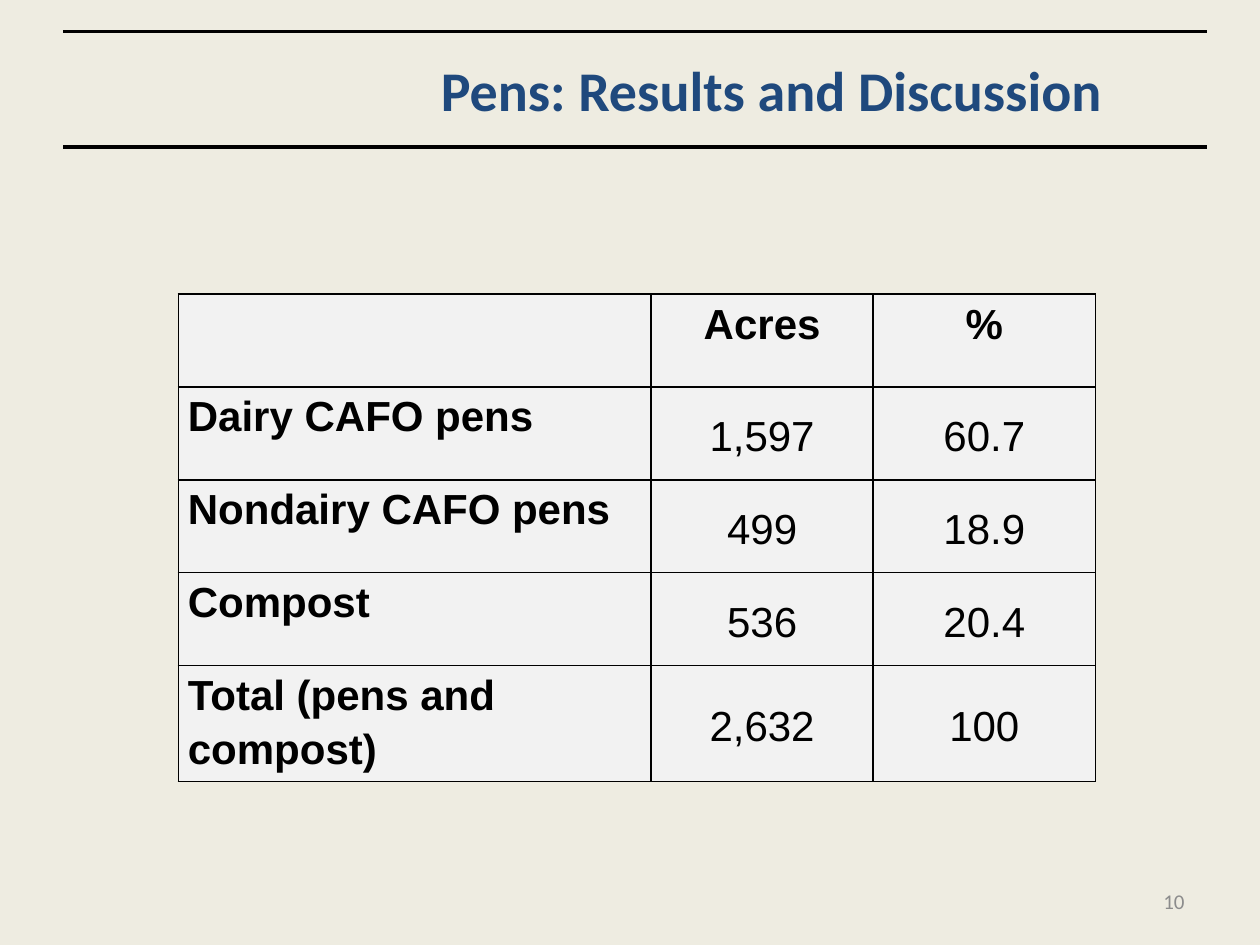
from dataclasses import dataclass

import lxml.etree
import pptx
import pptx.dml.color
import pptx.enum.shapes
import pptx.enum.text
import pptx.oxml.ns
import pptx.slide
import pptx.table
import pptx.text.text
import pptx.util

Pt = pptx.util.Pt
RGBColor = pptx.dml.color.RGBColor
Align = pptx.enum.text.PP_ALIGN
Anchor = pptx.enum.text.MSO_ANCHOR
qn = pptx.oxml.ns.qn

BACKGROUND = RGBColor(0xEE, 0xEC, 0xE1)
BLACK = RGBColor(0x00, 0x00, 0x00)
NAVY = RGBColor(0x1F, 0x49, 0x7D)
GRAY = RGBColor(0x8C, 0x8C, 0x8C)
CELL_FILL = RGBColor(0xF2, 0xF2, 0xF2)

RULE_LEFT, RULE_RIGHT = 36, 690
RULE_TOPS = (18, 84)
TABLE_LEFT, TABLE_TOP = 102, 168
COL_WIDTHS = (270, 127, 127)
ROW_HEIGHT = 53.1
ROWS = (
    ("", "Acres", "%"),
    ("Dairy CAFO pens", "1,597", "60.7"),
    ("Nondairy CAFO pens", "499", "18.9"),
    ("Compost", "536", "20.4"),
    ("Total (pens and compost)", "2,632", "100"),
)


@dataclass(frozen=True)
class Style:
    size: float
    font: str
    color: RGBColor
    bold: bool
    align: Align
    anchor: Anchor


@dataclass(frozen=True)
class Label:
    text: str
    left: float
    top: float
    width: float
    height: float
    style: Style


TITLE = Style(32, "Calibri", NAVY, True, Align.CENTER, Anchor.MIDDLE)
PAGE = Style(12, "Calibri", GRAY, False, Align.RIGHT, Anchor.MIDDLE)
HEADER = Style(24, "Arial", BLACK, True, Align.CENTER, Anchor.TOP)
ROW_NAME = Style(24, "Arial", BLACK, True, Align.LEFT, Anchor.TOP)
VALUE = Style(24, "Arial", BLACK, False, Align.CENTER, Anchor.MIDDLE)

LABELS = (
    Label("Pens: Results and Discussion", 192, 18, 498, 66, TITLE),
    Label("10", 516, 500.5, 168, 28.75, PAGE),
)


def write(tf: pptx.text.text.TextFrame, text: str, style: Style) -> None:
    tf.text = text
    p = tf.paragraphs[0]
    p.alignment = style.align
    for r in p.runs:
        r.font.size = Pt(style.size)
        r.font.name = style.font
        r.font.bold = style.bold
        r.font.color.rgb = style.color


def add_rule(s: pptx.slide.Slide, top: float) -> None:
    line = s.shapes.add_connector(
        pptx.enum.shapes.MSO_CONNECTOR.STRAIGHT,
        Pt(RULE_LEFT), Pt(top), Pt(RULE_RIGHT), Pt(top),
    )
    line.line.color.rgb = BLACK
    line.line.width = Pt(2)
    lxml.etree.SubElement(line._element.spPr, qn("a:effectLst"))


def add_label(s: pptx.slide.Slide, label: Label) -> None:
    sp = s.shapes.add_textbox(
        Pt(label.left), Pt(label.top), Pt(label.width), Pt(label.height)
    )
    tf = sp.text_frame
    tf.word_wrap = True
    tf.vertical_anchor = label.style.anchor
    write(tf, label.text, label.style)


def add_borders(cell: pptx.table._Cell) -> None:
    tc_pr = cell._tc.get_or_add_tcPr()
    for i, side in enumerate(("a:lnL", "a:lnR", "a:lnT", "a:lnB")):
        ln = lxml.etree.Element(qn(side), w=str(Pt(1)))
        fill = lxml.etree.SubElement(ln, qn("a:solidFill"))
        lxml.etree.SubElement(fill, qn("a:srgbClr"), val=str(BLACK))
        tc_pr.insert(i, ln)


def fill_cell(cell: pptx.table._Cell, text: str, style: Style) -> None:
    cell.margin_left = cell.margin_right = Pt(5.4)
    cell.margin_top = cell.margin_bottom = Pt(0)
    cell.vertical_anchor = style.anchor
    write(cell.text_frame, text, style)
    cell.text_frame.paragraphs[0].line_spacing = 1.15
    cell.fill.solid()
    cell.fill.fore_color.rgb = CELL_FILL
    add_borders(cell)


def add_acreage_table(s: pptx.slide.Slide) -> None:
    table = s.shapes.add_table(
        len(ROWS), len(COL_WIDTHS), Pt(TABLE_LEFT), Pt(TABLE_TOP),
        Pt(sum(COL_WIDTHS)), Pt(ROW_HEIGHT * len(ROWS)),
    ).table
    for col, width in zip(table.columns, COL_WIDTHS):
        col.width = Pt(width)
    for i, texts in enumerate(ROWS):
        table.rows[i].height = Pt(ROW_HEIGHT)
        for j, text in enumerate(texts):
            style = HEADER if i == 0 else ROW_NAME if j == 0 else VALUE
            fill_cell(table.cell(i, j), text, style)


def main() -> None:
    prs = pptx.Presentation()
    prs.slide_width, prs.slide_height = Pt(720), Pt(540)
    s = prs.slides.add_slide(prs.slide_layouts[6])
    s.background.fill.solid()
    s.background.fill.fore_color.rgb = BACKGROUND
    for top in RULE_TOPS:
        add_rule(s, top)
    for label in LABELS:
        add_label(s, label)
    add_acreage_table(s)
    prs.save("out.pptx")


if __name__ == "__main__":
    main()
